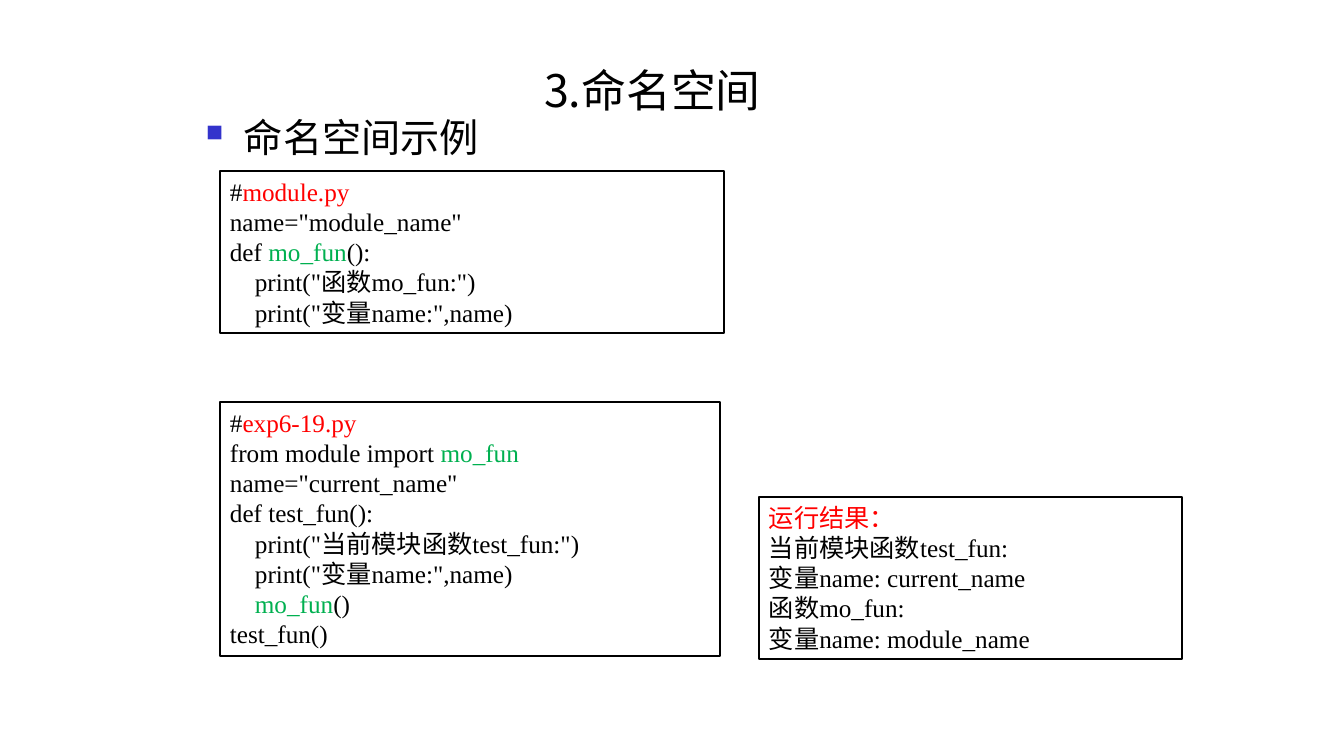
import pptx
import pptx.util
import pptx.dml.color
import pptx.enum.shapes
import pptx.enum.text
import pptx.oxml
import pptx.oxml.ns

EMU_PER_PX = 914400 / 100.8
BLACK, RED, GREEN, BLUE = "000000", "FF0000", "00B050", "3333CC"
CJK_FONT = "Noto Sans CJK SC"
CODE_INDENT = 25
BULLET_INDENT = 38


def px(length):
    return pptx.util.Emu(round(length * EMU_PER_PX))


def add_span(para, text, size, font, color=BLACK):
    span = para.add_run()
    span.text = text
    span.font.size = pptx.util.Pt(size)
    span.font.name = font
    span.font.color.rgb = pptx.dml.color.RGBColor.from_string(color)
    east_asian = pptx.oxml.parse_xml(
        f'<a:ea {pptx.oxml.ns.nsdecls("a")} typeface="{CJK_FONT}"/>')
    span.font._element.find(pptx.oxml.ns.qn("a:latin")).addnext(east_asian)


deck = pptx.Presentation()
deck.slide_width, deck.slide_height = px(1344), px(756)
page = deck.slides.add_slide(deck.slide_layouts[6])

# Bulleted heading
heading = page.shapes.add_textbox(px(196), px(108), px(944), px(80))
heading.text_frame.word_wrap = True
para = heading.text_frame.paragraphs[0]
add_span(para, "命名空间示例", 28, "Roboto")
properties = para._p.get_or_add_pPr()
properties.set("marL", str(px(BULLET_INDENT)))
properties.set("indent", str(-px(BULLET_INDENT)))
for tag in (f'<a:buClr {{}}><a:srgbClr val="{BLUE}"/></a:buClr>',
            '<a:buSzPct {} val="60000"/>',
            '<a:buChar {} char="■"/>'):
    properties.append(pptx.oxml.parse_xml(tag.format(pptx.oxml.ns.nsdecls("a"))))

# Framed listings: place, then lines of (indent level, coloured pieces)
listings = [
    ((220, 171, 504, 162), [
        (0, [("#", BLACK), ("module.py", RED)]),
        (0, [('name="module_name"', BLACK)]),
        (0, [("def ", BLACK), ("mo_fun", GREEN), ("():", BLACK)]),
        (1, [('print("函数mo_fun:")', BLACK)]),
        (1, [('print("变量name:",name)', BLACK)]),
    ]),
    ((220, 402, 500, 254), [
        (0, [("#", BLACK), ("exp6-19.py", RED)]),
        (0, [("from module import ", BLACK), ("mo_fun", GREEN)]),
        (0, [('name="current_name"', BLACK)]),
        (0, [("def test_fun():", BLACK)]),
        (1, [('print("当前模块函数test_fun:")', BLACK)]),
        (1, [('print("变量name:",name)', BLACK)]),
        (1, [("mo_fun", GREEN), ("()", BLACK)]),
        (0, [("test_fun()", BLACK)]),
    ]),
    ((759, 497, 423, 162), [
        (0, [("运行结果：", RED)]),
        (0, [("当前模块函数test_fun:", BLACK)]),
        (0, [("变量name: current_name", BLACK)]),
        (0, [("函数mo_fun:", BLACK)]),
        (0, [("变量name: module_name", BLACK)]),
    ]),
]
for place, lines in listings:
    box = page.shapes.add_shape(pptx.enum.shapes.MSO_SHAPE.RECTANGLE,
                                *(px(length) for length in place))
    box.shadow.inherit = False
    box.fill.background()
    box.line.color.rgb = pptx.dml.color.RGBColor.from_string(BLACK)
    box.line.width = pptx.util.Pt(2)
    frame = box.text_frame
    frame.word_wrap = True
    frame.auto_size = pptx.enum.text.MSO_AUTO_SIZE.SHAPE_TO_FIT_TEXT
    frame.vertical_anchor = pptx.enum.text.MSO_ANCHOR.TOP
    for number, (level, pieces) in enumerate(lines):
        para = frame.add_paragraph() if number else frame.paragraphs[0]
        para.alignment = pptx.enum.text.PP_ALIGN.LEFT
        if level:
            para._p.get_or_add_pPr().set("marL", str(px(level * CODE_INDENT)))
        for text, color in pieces:
            add_span(para, text, 18, "Times New Roman", color)

# Title
title = page.shapes.add_textbox(px(80), px(49), px(1145), px(72))
title.text_frame.word_wrap = True
title.text_frame.vertical_anchor = pptx.enum.text.MSO_ANCHOR.BOTTOM
para = title.text_frame.paragraphs[0]
para.alignment = pptx.enum.text.PP_ALIGN.CENTER
para.line_spacing = 1.5
add_span(para, "3.命名空间", 32, CJK_FONT)

deck.save("out.pptx")
